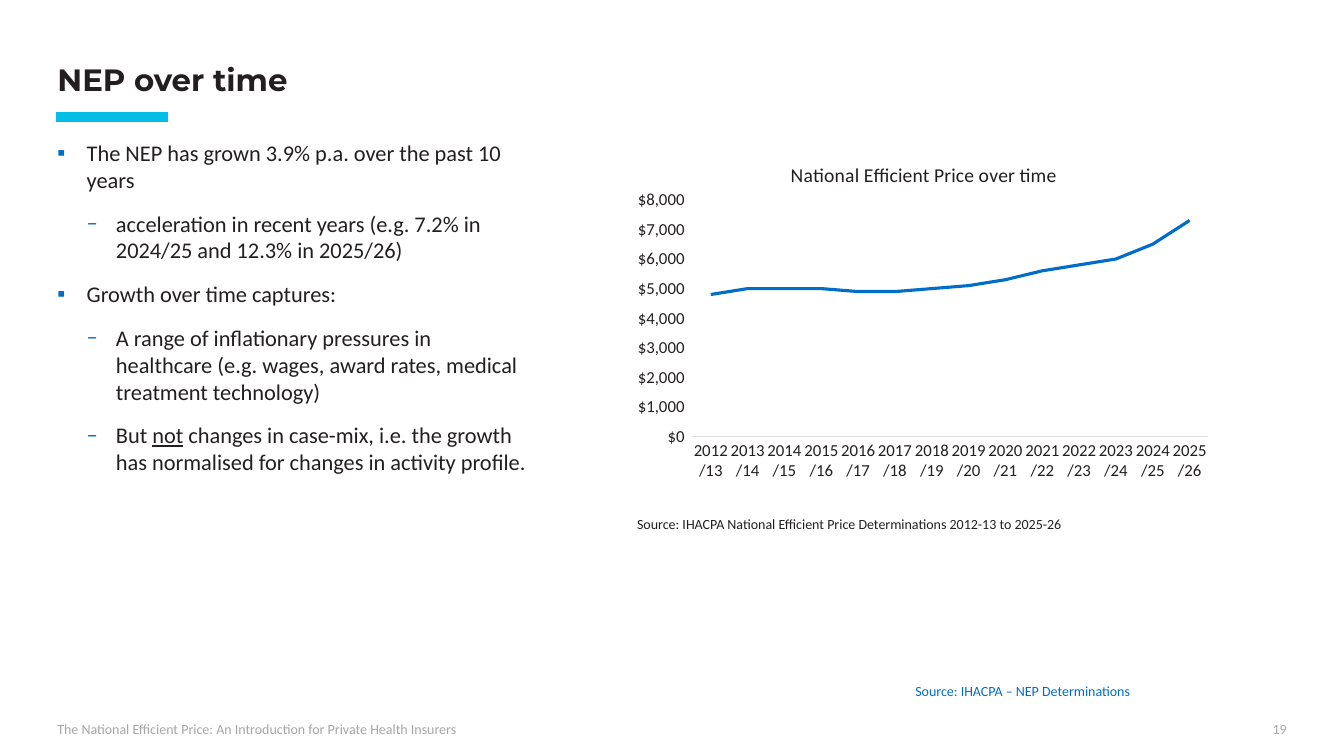
import pptx
import pptx.chart.data
import pptx.dml.color
import pptx.enum.chart
import pptx.enum.shapes
import pptx.enum.text
import pptx.oxml
import pptx.oxml.ns
import pptx.util

Inches, Pt = pptx.util.Inches, pptx.util.Pt
ALIGN, ANCHOR = pptx.enum.text.PP_ALIGN, pptx.enum.text.MSO_ANCHOR

COLOURS = {"ink": "231F20", "blue": "006EC8", "cyan": "00BEE6",
           "grey": "A6A6A6", "axis": "E0DCDD"}

# Level, then the runs as (text, underlined)
POINTS = [
    (0, [("The NEP has grown 3.9% p.a. over the past 10 years", False)]),
    (1, [("acceleration in recent years (e.g. 7.2% in 2024/25 and 12.3% in 2025/26)", False)]),
    (0, [("Growth over time captures:", False)]),
    (1, [("A range of inflationary pressures in healthcare (e.g. wages, award rates, "
          "medical treatment technology)", False)]),
    (1, [("But ", False), ("not", True),
         (" changes in case-mix, i.e. the growth has normalised for changes in "
          "activity profile.", False)]),
]
BULLETS = "▪–"
INDENT = 0.29

PRICES = [4800, 5000, 5000, 5000, 4900, 4900, 5000,
          5100, 5300, 5600, 5800, 6000, 6500, 7300]
YEARS = [f"{year}/{year % 100 + 1}" for year in range(2012, 2012 + len(PRICES))]


def colour(name):
    return pptx.dml.color.RGBColor.from_string(COLOURS[name])


def set_values(target, values):
    for name, value in values.items():
        setattr(target, name, value)


def set_font(font, size, ink, **extra):
    set_values(font, {"name": "Calibri", "size": Pt(size), "bold": False, **extra})
    font.color.rgb = colour(ink)


def place(shape, left, top, width, height):
    set_values(shape, {"left": Inches(left), "top": Inches(top),
                       "width": Inches(width), "height": Inches(height)})


def new_element(tag, **attributes):
    element = pptx.oxml.parse_xml(f"<{tag} {pptx.oxml.ns.nsdecls(tag.split(':')[0])}/>")
    for name, value in attributes.items():
        element.set(name, str(value))
    return element


def add_element(parent, tag, **attributes):
    element = new_element(tag, **attributes)
    parent.append(element)
    return element


def add_label(page, text, left, top, width, ink, align=ALIGN.LEFT):
    box = page.shapes.add_textbox(Inches(left), Inches(top), Inches(width), Inches(0.27))
    set_values(box.text_frame, {"word_wrap": True, "vertical_anchor": ANCHOR.MIDDLE})
    para = box.text_frame.paragraphs[0]
    para.alignment = align
    span = para.add_run()
    span.text = text
    set_font(span.font, 10, ink)


def add_accent(page):
    accent = page.shapes.add_connector(pptx.enum.shapes.MSO_CONNECTOR.STRAIGHT,
                                       Inches(0.56), Inches(1.16), Inches(1.67), Inches(1.16))
    accent.line.color.rgb = colour("cyan")
    accent.line.width = Pt(7)
    add_element(accent._element.spPr, "a:effectLst")


def fill_title(title):
    place(title, 0.47, 0.47, 12.39, 0.5)
    frame = title.text_frame
    set_values(frame, {"vertical_anchor": ANCHOR.BOTTOM, "margin_bottom": 0,
                       "auto_size": pptx.enum.text.MSO_AUTO_SIZE.NONE})
    para = frame.paragraphs[0]
    set_values(para, {"alignment": ALIGN.LEFT, "line_spacing": 0.9})
    span = para.add_run()
    span.text = "NEP over time"
    set_font(span.font, 22, "ink", name="Montserrat", bold=True)


def add_bullet(para, level):
    properties = para._p.get_or_add_pPr()
    properties.set("marL", str(Inches(INDENT * (level + 1))))
    properties.set("indent", str(-Inches(INDENT)))
    add_element(add_element(properties, "a:buClr"), "a:srgbClr", val=COLOURS["blue"])
    add_element(properties, "a:buFont", typeface="Calibri")
    add_element(properties, "a:buChar", char=BULLETS[level])


def fill_body(body):
    place(body, 0.47, 1.33, 4.89, 5.38)
    frame = body.text_frame
    frame.auto_size = pptx.enum.text.MSO_AUTO_SIZE.NONE
    for index, (level, spans) in enumerate(POINTS):
        para = frame.add_paragraph() if index else frame.paragraphs[0]
        add_bullet(para, level)
        set_values(para, {"level": level, "space_before": Pt(6 if index else 0),
                          "space_after": Pt(6)})
        for text, underlined in spans:
            span = para.add_run()
            span.text = text
            set_font(span.font, 16, "ink", underline=underlined)


def set_layout(part, **fractions):
    """Fix a chart part at fractions of the chart's size."""
    layout = part.find(pptx.oxml.ns.qn("c:layout"))
    if layout is None:
        layout = new_element("c:layout")
        part.insert(len(part.findall(pptx.oxml.ns.qn("c:tx"))), layout)
    for child in list(layout):
        layout.remove(child)
    manual = add_element(layout, "c:manualLayout")
    if "w" in fractions:
        add_element(manual, "c:layoutTarget", val="inner")
    for side in "xy":
        add_element(manual, f"c:{side}Mode", val="edge")
    for name, value in fractions.items():
        add_element(manual, f"c:{name}", val=value)


def add_price_chart(page):
    data = pptx.chart.data.CategoryChartData()
    data.categories = YEARS
    data.add_series("Series 1", PRICES)
    chart = page.shapes.add_chart(pptx.enum.chart.XL_CHART_TYPE.LINE, Inches(6.22),
                                  Inches(1.35), Inches(5.88), Inches(3.51), data).chart
    set_font(chart.font, 10, "ink")
    chart.has_legend = False

    # Title and plot area
    span = chart.chart_title.text_frame.paragraphs[0].add_run()
    span.text = "National Efficient Price over time"
    set_font(span.font, 14, "ink")
    set_layout(chart.chart_title._element, x=0.27, y=0.06)
    set_layout(chart._chartSpace.chart.plotArea, x=0.11, y=0.18, w=0.87, h=0.67)

    # Axes
    none = pptx.enum.chart.XL_TICK_MARK.NONE
    for axis in (chart.category_axis, chart.value_axis):
        set_values(axis, {"major_tick_mark": none, "minor_tick_mark": none,
                          "has_major_gridlines": False})
        set_font(axis.tick_labels.font, 12, "ink")
    chart.category_axis.format.line.color.rgb = colour("axis")
    chart.category_axis.format.line.width = Pt(0.75)
    chart.value_axis.format.line.fill.background()
    set_values(chart.value_axis, {"minimum_scale": 0, "maximum_scale": 8000,
                                  "major_unit": 1000})
    set_values(chart.value_axis.tick_labels, {
        "number_format": '"$"#,##0_);[Red]\\("$"#,##0\\)', "number_format_is_linked": False})

    # Price line
    chart.plots[0].vary_by_categories = False
    series = chart.plots[0].series[0]
    series.smooth = False
    series.marker.style = pptx.enum.chart.XL_MARKER_STYLE.NONE
    series.format.line.color.rgb = colour("blue")
    series.format.line.width = Pt(2.25)


def main():
    deck = pptx.Presentation()
    set_values(deck, {"slide_width": Inches(13.33), "slide_height": Inches(7.5)})
    page = deck.slides.add_slide(deck.slide_layouts[1])

    # Heading and points
    fill_title(page.shapes.title)
    add_accent(page)
    fill_body(page.placeholders[1])

    # Chart and sources
    add_price_chart(page)
    add_label(page, "Source: IHACPA National Efficient Price Determinations 2012-13 to 2025-26",
              6.22, 5.06, 5.74, "ink")
    add_label(page, "Source: IHACPA – NEP Determinations", 8.98, 6.72, 4.35, "blue")

    # Footer
    add_label(page, "The National Efficient Price: An Introduction for Private Health Insurers",
              0.47, 7.1, 8.09, "grey")
    add_label(page, "19", 9.86, 7.1, 3, "grey", ALIGN.RIGHT)
    deck.save("out.pptx")


if __name__ == "__main__":
    main()
